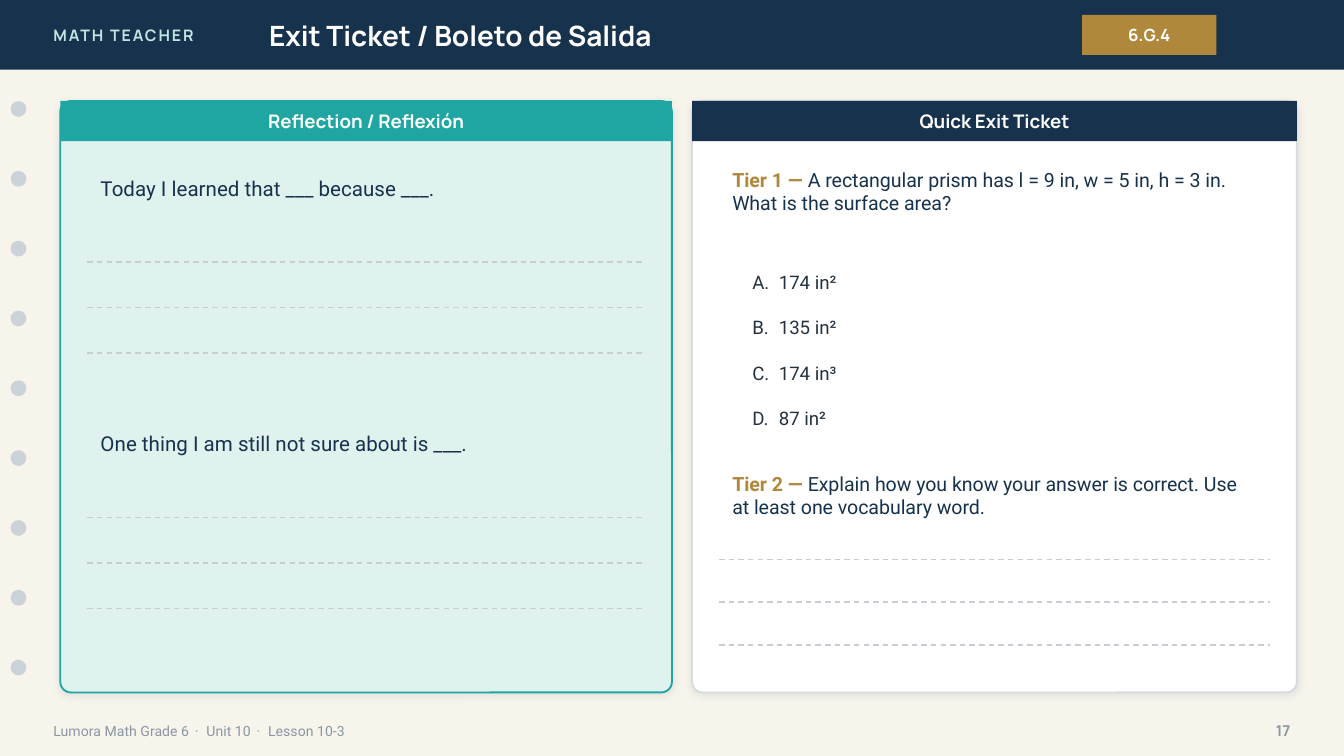
"""Build a bilingual exit-ticket slide with a reflection panel and a quiz panel."""
from collections import namedtuple
from dataclasses import dataclass

from lxml.etree import SubElement
from pptx import Presentation
from pptx.dml.color import RGBColor
from pptx.enum.dml import MSO_LINE
from pptx.enum.shapes import MSO_CONNECTOR, MSO_SHAPE as Shape
from pptx.enum.text import MSO_ANCHOR as Anchor, MSO_AUTO_SIZE, PP_ALIGN as Align
from pptx.oxml.ns import qn
from pptx.util import Cm, Pt

Style = namedtuple("Style", "size font color bold tracking", defaults=(False, 0))


@dataclass(frozen=True)
class Theme:
    paper: str = "F7F4EC"
    navy: str = "17324D"
    gold: str = "B0883B"
    teal: str = "1FA6A2"
    mint: str = "DFF2EE"
    white: str = "FFFFFF"
    hole: str = "CBD3D9"
    edge: str = "D6DBDF"
    rule: str = "C7CDD2"
    shade: str = "1C2E42"
    brand: Style = Style(8.5, "Manrope", "BFE6E2", True, 1)
    title: Style = Style(15, "Manrope", "FFFFFF", True)
    standard: Style = Style(9, "Manrope", "FFFFFF", True)
    heading: Style = Style(10, "Manrope", "FFFFFF", True)
    prompt: Style = Style(11, "Roboto", "17324D")
    tier: Style = Style(10.5, "Roboto", "B0883B", True)
    question: Style = Style(10.5, "Roboto", "17324D")
    choice: Style = Style(10, "Roboto", "24323F")
    footer: Style = Style(7.5, "Roboto", "8A96A3")
    separator: Style = Style(7.5, "Roboto", "8A96A3", False, 1.2)
    page: Style = Style(8, "Manrope", "8A96A3", True)


theme = Theme()
deck = Presentation()
deck.slide_width, deck.slide_height = Cm(25.4), Cm(14.29)
slide = deck.slides.add_slide(deck.slide_layouts[5])
slide.background.fill.solid()
slide.background.fill.fore_color.rgb = RGBColor.from_string(theme.paper)


def add_filled(kind, box, fill):
    shape = slide.shapes.add_shape(kind, *map(Cm, box))
    shape.shadow.inherit = False
    shape.fill.solid()
    shape.fill.fore_color.rgb = RGBColor.from_string(fill)
    shape.line.fill.background()
    return shape


def write(shape, *pieces, align=Align.LEFT, anchor=Anchor.MIDDLE):
    frame = shape.text_frame
    frame.word_wrap = True
    frame.auto_size = MSO_AUTO_SIZE.NONE
    frame.vertical_anchor = anchor
    paragraph = frame.paragraphs[0]
    paragraph.alignment = align
    for text, style in pieces:
        run = paragraph.add_run()
        run.text = text
        run.font.size = Pt(style.size)
        run.font.name = style.font
        run.font.bold = style.bold
        run.font.color.rgb = RGBColor.from_string(style.color)
        if style.tracking:
            run.font._element.set("spc", str(round(style.tracking * 100)))
    return paragraph


header = add_filled(Shape.RECTANGLE, (0, 0, 25.4, 1.32), theme.navy)
title = slide.shapes.title
title.left, title.top, title.width, title.height = map(Cm, (4.83, 0, 14.22, 1.32))
header._element.addnext(title._element)
write(title, ("Exit Ticket / Boleto de Salida", theme.title))
brand = slide.shapes.add_textbox(Cm(0.76), 0, Cm(6.1), Cm(1.32))
write(brand, ("MATH TEACHER", theme.brand))
standard = add_filled(Shape.RECTANGLE, (20.45, 0.28, 2.54, 0.76), theme.gold)
write(standard, ("6.G.4", theme.standard), align=Align.CENTER)

for hole in range(9):
    add_filled(Shape.OVAL, (0.2, 1.91 + 1.32 * hole, 0.3, 0.3), theme.hole)

lesson = slide.shapes.add_textbox(Cm(0.76), Cm(13.46), Cm(17.78), Cm(0.71))
dot = (" · ", theme.separator)
write(lesson, ("Lumora Math Grade 6", theme.footer), dot, ("Unit 10", theme.footer),
      dot, ("Lesson 10-3", theme.footer))
page = slide.shapes.add_textbox(Cm(23.37), Cm(13.46), Cm(1.27), Cm(0.71))
write(page, ("17", theme.page), align=Align.RIGHT)

for heading, left, width, fill, edge, band in (
    ("Reflection / Reflexión", 1.14, 11.56, theme.mint, theme.teal, theme.teal),
    ("Quick Exit Ticket", 13.08, 11.43, theme.white, theme.edge, theme.navy),
):
    panel = add_filled(Shape.ROUNDED_RECTANGLE, (left, 1.91, width, 11.18), fill)
    panel.adjustments[0] = 0.018
    panel.line.color.rgb = RGBColor.from_string(edge)
    panel.line.width = Pt(1)
    effects = panel._element.spPr.find(qn("a:effectLst"))
    shadow = SubElement(effects, qn("a:outerShdw"), blurRad=str(Pt(4)), dist=str(Pt(1)),
                        dir="5400000", algn="ctr", rotWithShape="0")
    shade = SubElement(shadow, qn("a:srgbClr"), val=theme.shade)
    SubElement(shade, qn("a:alpha"), val="10000")
    heading_band = add_filled(Shape.RECTANGLE, (left, 1.91, width, 0.76), band)
    write(heading_band, (heading, theme.heading), align=Align.CENTER)

for top, prompt in ((3.05, "Today I learned that ___ because ___."),
                    (7.87, "One thing I am still not sure about is ___.")):
    reflection = slide.shapes.add_textbox(Cm(1.65), Cm(top), Cm(10.54), Cm(1.02))
    write(reflection, (prompt, theme.prompt))

for top, height, tier, question in (
    (3.05, 1.78, "Tier 1 — ", "A rectangular prism has l = 9 in, w = 5 in, h = 3 in. "
                              "What is the surface area?"),
    (8.79, 1.4, "Tier 2 — ", "Explain how you know your answer is correct. "
                             "Use at least one vocabulary word."),
):
    task = slide.shapes.add_textbox(Cm(13.59), Cm(top), Cm(10.41), Cm(height))
    write(task, (tier, theme.tier), (question, theme.question), anchor=Anchor.TOP)

for row, (letter, answer) in enumerate(zip("ABCD", ("174 in²", "135 in²", "174 in³", "87 in²"))):
    choice = slide.shapes.add_textbox(Cm(13.97), Cm(4.95 + 0.86 * row), Cm(9.91), Cm(0.76))
    line = write(choice, (f"{letter}.\t{answer}", theme.choice))
    tabs = SubElement(line._p.get_or_add_pPr(), qn("a:tabLst"))
    SubElement(tabs, qn("a:tab"), pos=str(Cm(0.5)), algn="l")

for left, right, first, pitch in ((1.65, 12.19, 4.95, 0.86), (1.65, 12.19, 9.78, 0.86),
                                  (13.59, 24, 10.57, 0.81)):
    for row in range(3):
        height = Cm(first + pitch * row)
        rule = slide.shapes.add_connector(MSO_CONNECTOR.STRAIGHT, Cm(left), height,
                                          Cm(right), height)
        rule.line.color.rgb = RGBColor.from_string(theme.rule)
        rule.line.width = Pt(0.75)
        rule.line.dash_style = MSO_LINE.DASH
        SubElement(rule._element.spPr, qn("a:effectLst"))

deck.save("out.pptx")
